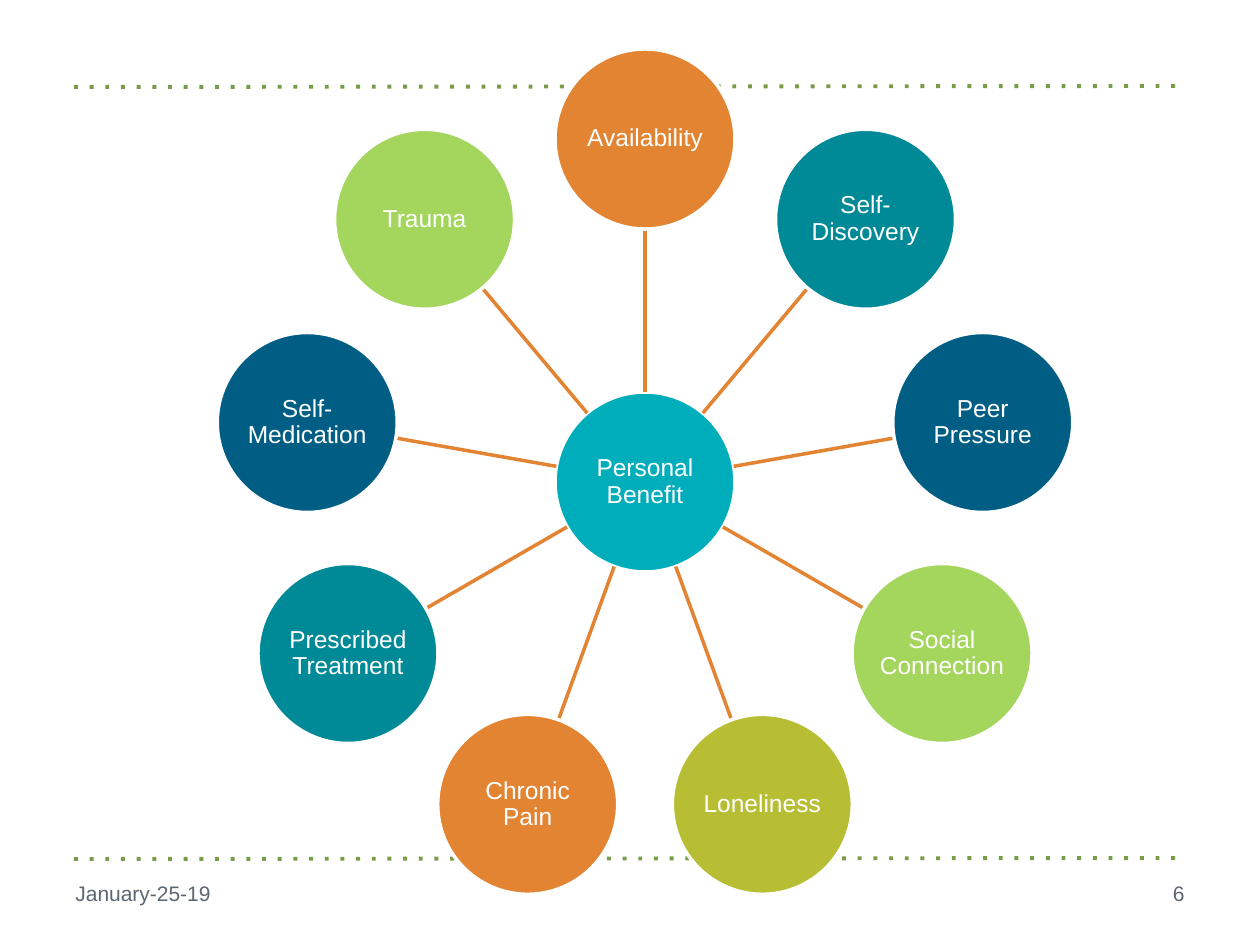
import math

import pptx
import pptx.dml.color
import pptx.enum.shapes
import pptx.enum.text
import pptx.oxml.ns
import pptx.util
from lxml import etree

EMU_PER_PX = 914400 / 126
ALIGN = pptx.enum.text.PP_ALIGN
ORANGE, TEAL, NAVY, LIME = "E28432", "008996", "005E85", "A4D55D"
WHITE, GREEN, GREY = "FFFFFF", "7A9C49", "5C6670"

HUB = ("Personal Benefit", "00ADBB")
REASONS = [  # clockwise from the top
    ("Availability", ORANGE),
    ("Self-Discovery", TEAL),
    ("Peer Pressure", NAVY),
    ("Social Connection", LIME),
    ("Loneliness", "B8BE34"),
    ("Chronic Pain", ORANGE),
    ("Prescribed Treatment", TEAL),
    ("Self-Medication", NAVY),
    ("Trauma", LIME),
]
CENTER_X, CENTER_Y = 645, 482
DIAMETER = 180
ORBIT = 343


def px(n):
    return pptx.util.Emu(round(n * EMU_PER_PX))


def rgb(color):
    return pptx.dml.color.RGBColor.from_string(color)


def write(tf, text, size=14, color=WHITE, align=ALIGN.CENTER, spacing=None):
    tf.word_wrap = True
    tf.vertical_anchor = pptx.enum.text.MSO_ANCHOR.MIDDLE
    p = tf.paragraphs[0]
    p.alignment = align
    p.line_spacing = spacing
    r = p.add_run()
    r.text = text
    r.font.name = "Arial"
    r.font.size = pptx.util.Pt(size)
    r.font.color.rgb = rgb(color)


class Deck:
    def __init__(self):
        self.prs = pptx.Presentation()
        self.prs.slide_width, self.prs.slide_height = px(1260), px(945)
        self.s = self.prs.slides.add_slide(self.prs.slide_layouts[6])

    def line(self, x1, y1, x2, y2, color, width, dash=None):
        kind = pptx.enum.shapes.MSO_CONNECTOR.STRAIGHT
        sp = self.s.shapes.add_connector(kind, px(x1), px(y1), px(x2), px(y2))
        sp.line.color.rgb = rgb(color)
        sp.line.width = pptx.util.Pt(width)
        qn = pptx.oxml.ns.qn
        if dash:
            ln = sp.line.fill and sp._element.spPr.find(qn("a:ln"))
            etree.SubElement(ln, qn("a:prstDash")).set("val", dash)
        etree.SubElement(sp._element.spPr, qn("a:effectLst"))

    def circle(self, cx, cy, text, color):
        kind = pptx.enum.shapes.MSO_SHAPE.OVAL
        sp = self.s.shapes.add_shape(kind, px(cx - DIAMETER / 2), px(cy - DIAMETER / 2),
                                     px(DIAMETER), px(DIAMETER))
        sp.shadow.inherit = False
        sp.fill.solid()
        sp.fill.fore_color.rgb = rgb(color)
        sp.line.color.rgb = rgb(WHITE)
        sp.line.width = pptx.util.Pt(2)
        tf = sp.text_frame
        tf.margin_left = tf.margin_right = tf.margin_top = tf.margin_bottom = px(1)
        write(tf, text, spacing=0.9)

    def footer(self, x, text, align):
        sp = self.s.shapes.add_textbox(px(x), px(868), px(294), px(50))
        write(sp.text_frame, text, size=12, color=GREY, align=align)


def main():
    deck = Deck()
    for y in (87, 859):
        deck.line(74, y, 1186, y - 1, GREEN, 2.25, dash="dot")
    deck.footer(63, "January-25-19", ALIGN.LEFT)

    deck.circle(CENTER_X, CENTER_Y, *HUB)
    for i, (text, color) in enumerate(REASONS):
        angle = math.tau * i / len(REASONS)
        dx, dy = math.sin(angle), -math.cos(angle)
        inner, outer = DIAMETER / 2, ORBIT - DIAMETER / 2
        deck.line(CENTER_X + inner * dx, CENTER_Y + inner * dy,
                  CENTER_X + outer * dx, CENTER_Y + outer * dy, ORANGE, 2)
        deck.circle(CENTER_X + ORBIT * dx, CENTER_Y + ORBIT * dy, text, color)

    deck.footer(903, "6", ALIGN.RIGHT)
    deck.prs.save("out.pptx")


if __name__ == "__main__":
    main()
